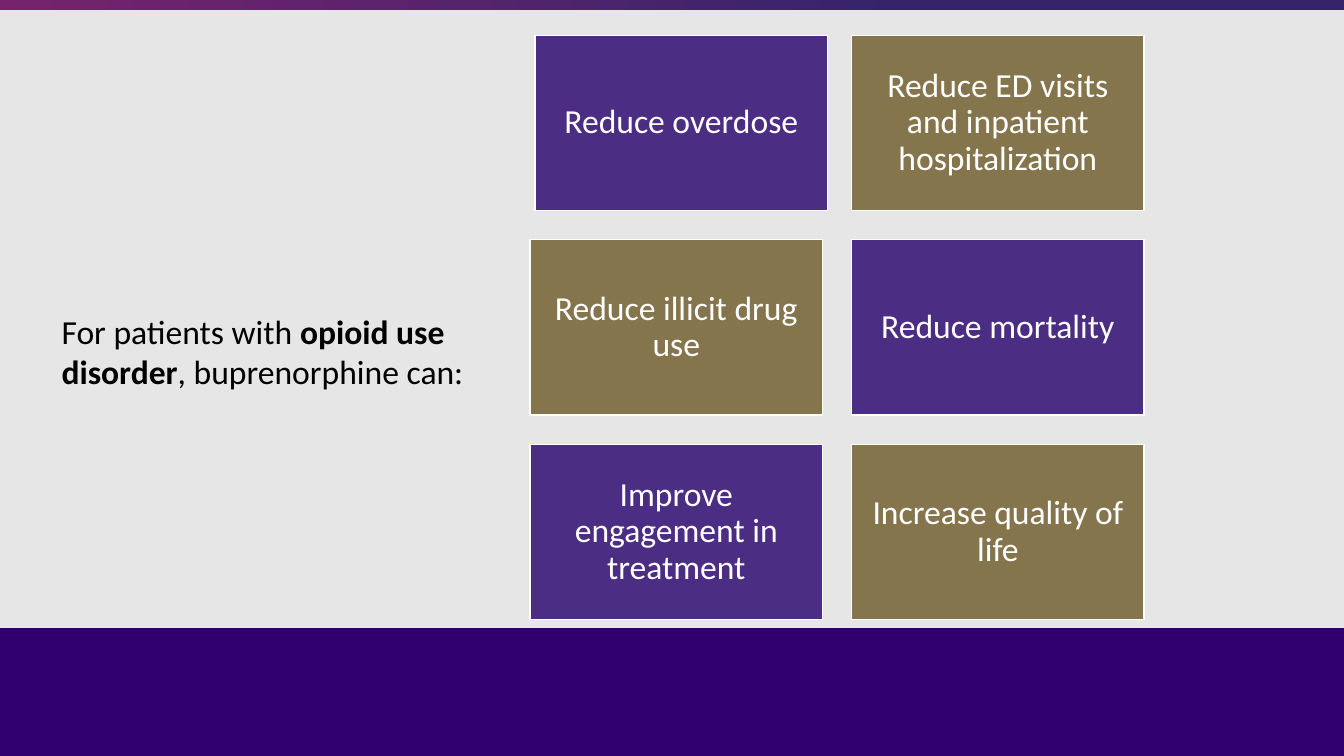
from pptx import Presentation
from pptx.dml.color import RGBColor
from pptx.enum.shapes import MSO_SHAPE
from pptx.enum.text import MSO_ANCHOR, MSO_AUTO_SIZE, PP_ALIGN
from pptx.util import Pt

PALE_GREY = RGBColor(0xE7, 0xE6, 0xE6)
DEEP_PURPLE = RGBColor(0x32, 0x00, 0x6E)
INDIGO = RGBColor(0x35, 0x24, 0x6C)
MAGENTA = RGBColor(0x77, 0x23, 0x6C)
PURPLE = RGBColor(0x4B, 0x2D, 0x83)
GOLD = RGBColor(0x85, 0x75, 0x4D)
WHITE = RGBColor(0xFF, 0xFF, 0xFF)
BLACK = RGBColor(0x00, 0x00, 0x00)

SLIDE_WIDTH, SLIDE_HEIGHT = 960, 540
CARD_WIDTH, CARD_HEIGHT = 208.8, 125.3
CARD_TOP, ROW_PITCH = 25.2, 146.1
RIGHT_COLUMN = 608.4
LEFT_COLUMN = 378.7
FIRST_CARD_LEFT = 382.3

BENEFITS = [
    ("Reduce overdose", "Reduce ED visits and inpatient hospitalization"),
    ("Reduce illicit drug use", "Reduce mortality"),
    ("Improve engagement in treatment", "Increase quality of life"),
]


def style_text(paragraph, color):
    paragraph.font.name = "Calibri"
    paragraph.font.size = Pt(24)
    paragraph.font.color.rgb = color


def add_rectangle(slide, left, top, width, height):
    rectangle = slide.shapes.add_shape(
        MSO_SHAPE.RECTANGLE, Pt(left), Pt(top), Pt(width), Pt(height))
    rectangle.shadow.inherit = False
    return rectangle


def add_footer_band(slide):
    band = add_rectangle(slide, 0, 448.7, SLIDE_WIDTH, 91.3)
    band.fill.solid()
    band.fill.fore_color.rgb = DEEP_PURPLE
    band.line.fill.background()


def add_top_stripe(slide):
    stripe = add_rectangle(slide, -2.4, 0, 964.8, 7.2)
    stripe.fill.gradient()
    stripe.fill.gradient_angle = 0
    stops = zip(stripe.fill.gradient_stops, (MAGENTA, INDIGO), (0, 0.67))
    for stop, color, position in stops:
        stop.color.rgb = color
        stop.position = position
    stripe.line.fill.background()


def add_lead_in(slide):
    lead_in = slide.shapes.add_textbox(Pt(36.9), Pt(218.2), Pt(312.5), Pt(65.4))
    frame = lead_in.text_frame
    frame.word_wrap = True
    frame.auto_size = MSO_AUTO_SIZE.SHAPE_TO_FIT_TEXT
    sentence = frame.paragraphs[0]
    style_text(sentence, BLACK)
    sentence.add_run().text = "For patients with "
    condition = sentence.add_run()
    condition.text = "opioid use disorder"
    condition.font.bold = True
    sentence.add_run().text = ", buprenorphine can:"


def add_benefit_card(slide, benefit, left, top, color):
    card = add_rectangle(slide, left, top, CARD_WIDTH, CARD_HEIGHT)
    card.fill.solid()
    card.fill.fore_color.rgb = color
    card.line.color.rgb = WHITE
    card.line.width = Pt(1)
    frame = card.text_frame
    frame.word_wrap = True
    frame.vertical_anchor = MSO_ANCHOR.MIDDLE
    frame.margin_left = frame.margin_right = Pt(7.2)
    frame.margin_top = frame.margin_bottom = Pt(7.2)
    label = frame.paragraphs[0]
    label.text = benefit
    label.alignment = PP_ALIGN.CENTER
    label.line_spacing = 0.9
    style_text(label, WHITE)


def add_benefit_grid(slide):
    for row, benefits in enumerate(BENEFITS):
        left_column = LEFT_COLUMN if row else FIRST_CARD_LEFT
        for column, benefit in enumerate(benefits):
            left = RIGHT_COLUMN if column else left_column
            color = GOLD if (row + column) % 2 else PURPLE
            add_benefit_card(slide, benefit, left, CARD_TOP + row * ROW_PITCH, color)


def main():
    presentation = Presentation()
    presentation.slide_width = Pt(SLIDE_WIDTH)
    presentation.slide_height = Pt(SLIDE_HEIGHT)
    slide = presentation.slides.add_slide(presentation.slide_layouts[6])
    slide.background.fill.solid()
    slide.background.fill.fore_color.rgb = PALE_GREY
    add_footer_band(slide)
    add_top_stripe(slide)
    add_lead_in(slide)
    add_benefit_grid(slide)
    presentation.save("out.pptx")


if __name__ == "__main__":
    main()
